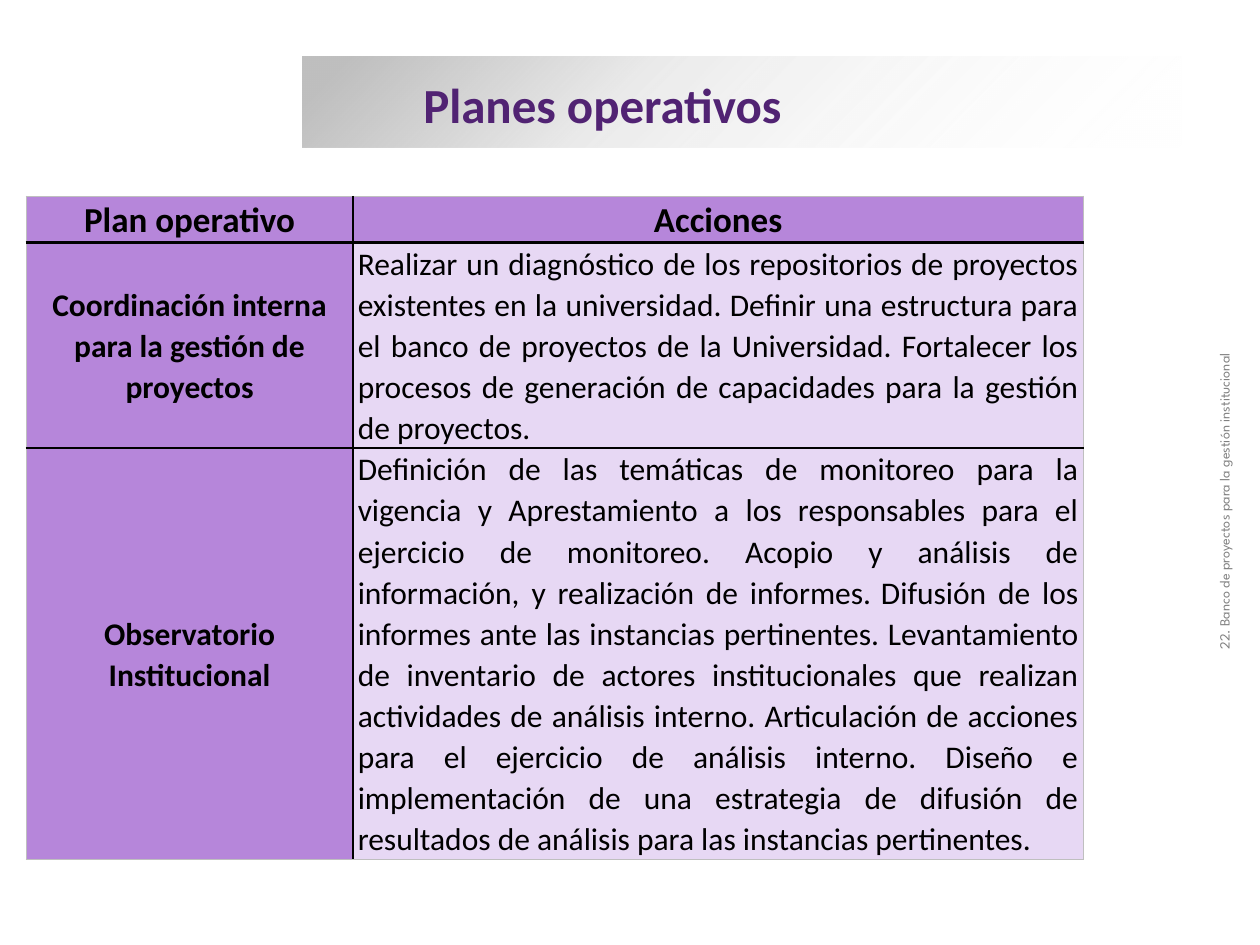
import lxml.etree
import pptx
import pptx.dml.color
import pptx.enum.shapes
import pptx.enum.text
import pptx.oxml
import pptx.oxml.ns
import pptx.util

WIDTH, HEIGHT = 10, 7.5
PURPLE, LILAC, BLACK, GREY = "B686DA", "E7D8F4", "000000", "BFBFBF"
ALIGN = pptx.enum.text.PP_ALIGN
MIDDLE = pptx.enum.text.MSO_ANCHOR.MIDDLE

ROWS = [
    ("Plan operativo", "Acciones"),
    ("Coordinación interna para la gestión de proyectos",
     "Realizar un diagnóstico de los repositorios de proyectos existentes en la "
     "universidad. Definir una estructura para el banco de proyectos de la "
     "Universidad. Fortalecer los procesos de generación de capacidades para la "
     "gestión de proyectos."),
    ("Observatorio Institucional",
     "Definición de las temáticas de monitoreo para la vigencia y Aprestamiento a "
     "los responsables para el ejercicio de monitoreo. Acopio y análisis de "
     "información, y realización de informes.\tDifusión de los informes ante las "
     "instancias pertinentes. Levantamiento de inventario de actores "
     "institucionales que realizan actividades de análisis interno. Articulación "
     "de acciones para el ejercicio de análisis interno. Diseño e implementación "
     "de una estrategia de difusión de resultados de análisis para las instancias "
     "pertinentes."),
]
COLUMN_SHARES = (2.59, 5.8)
ROW_SHARES = (0.35, 1.61, 3.21)


def color(value):
    return pptx.dml.color.RGBColor.from_string(value)


def inches(box):
    return [pptx.util.Inches(length) for length in box]


def style(paragraph, size, value, bold=False, name="Calibri", align=ALIGN.LEFT):
    paragraph.alignment = align
    font = paragraph.font
    font.name, font.size, font.bold = name, pptx.util.Pt(size), bold
    font.color.rgb = color(value)


def fill_gradient(shape, stops, angle):
    """Fill with (position %, colour, opacity %) stops."""
    namespace = pptx.oxml.ns.nsdecls("a")
    stop_xml = "".join(
        f'<a:gs pos="{position * 1000}"><a:srgbClr val="{value}">'
        f'<a:alpha val="{opacity * 1000}"/></a:srgbClr></a:gs>'
        for position, value, opacity in stops)
    gradient = pptx.oxml.parse_xml(
        f'<a:gradFill {namespace} rotWithShape="1"><a:gsLst>{stop_xml}</a:gsLst>'
        f'<a:lin ang="{angle * 60000}" scaled="0"/></a:gradFill>')
    shape.fill.background()
    old_fill = shape._element.spPr.find(pptx.oxml.ns.qn("a:noFill"))
    shape._element.spPr.replace(old_fill, gradient)


def add_heading(slide, box):
    left, top, width, height = box
    # Fading band behind the title
    band = slide.shapes.add_shape(
        pptx.enum.shapes.MSO_SHAPE.RECTANGLE, *inches(box))
    band.shadow.inherit = False
    band.line.fill.background()
    fill_gradient(band, [(5, GREY, 100), (37, GREY, 31), (100, "FFFFFF", 0)], 45)

    # Title
    title = slide.shapes.title
    title._element.addprevious(band._element)
    title.left, title.top, title.width, title.height = inches(
        (left + 0.86, top + 0.09, 6.2, 0.57))
    frame = title.text_frame
    frame.text = "Planes operativos"
    frame.auto_size = pptx.enum.text.MSO_AUTO_SIZE.NONE
    frame.vertical_anchor = MIDDLE
    style(frame.paragraphs[0], 28, "512373", bold=True)


def set_borders(cell, borders):
    """Borders map a side (L, R, T, B) to its colour and width in points."""
    properties = cell._tc.get_or_add_tcPr()
    for index, side in enumerate("LRTB"):
        value, width = borders[side]
        properties.insert(index, pptx.oxml.parse_xml(
            f'<a:ln{side} {pptx.oxml.ns.nsdecls("a")} w="{pptx.util.Pt(width)}">'
            f'<a:solidFill><a:srgbClr val="{value}"/></a:solidFill></a:ln{side}>'))


def add_plan_table(slide, box):
    left, top, width, height = box
    last = len(ROWS) - 1
    table = slide.shapes.add_table(len(ROWS), 2, *inches(box)).table
    for column, share in zip(table.columns, COLUMN_SHARES):
        column.width = pptx.util.Inches(width * share / sum(COLUMN_SHARES))
    for row, share in zip(table.rows, ROW_SHARES):
        row.height = pptx.util.Inches(height * share / sum(ROW_SHARES))

    # Lines above and below each row
    rules = [(GREY, 1), (BLACK, 1.5), (BLACK, 1), (GREY, 1)]
    uprights = [(GREY, 1), (BLACK, 1.5), (GREY, 1)]
    for r, texts in enumerate(ROWS):
        for c, text in enumerate(texts):
            cell = table.cell(r, c)
            is_action = r > 0 and c == 1
            cell.fill.solid()
            cell.fill.fore_color.rgb = color(LILAC if is_action else PURPLE)
            cell.vertical_anchor = MIDDLE
            cell.margin_left = cell.margin_right = pptx.util.Inches(0.04)
            cell.margin_top = cell.margin_bottom = 0
            cell.text_frame.text = text
            paragraph = cell.text_frame.paragraphs[0]
            paragraph.line_spacing = 1.07
            style(paragraph, 18 if r else 20, BLACK, bold=not is_action,
                  align=ALIGN.JUSTIFY if is_action else ALIGN.CENTER)
            set_borders(cell, {"L": uprights[c], "R": uprights[c + 1],
                               "T": rules[r], "B": rules[r + 1]})


def add_side_label(slide, box):
    label = slide.shapes.add_textbox(*inches(box))
    label.rotation = 270
    frame = label.text_frame
    frame.word_wrap = True
    frame.text = "22. Banco de proyectos para la gestión institucional"
    style(frame.paragraphs[0], 8, "808080", name="League Spartan",
          align=ALIGN.CENTER)


def main():
    presentation = pptx.Presentation()
    presentation.slide_width, presentation.slide_height = inches((WIDTH, HEIGHT))
    slide = presentation.slides.add_slide(presentation.slide_layouts[5])
    add_heading(slide, (0.24 * WIDTH, 0.06 * HEIGHT, 6.98, 0.72))
    add_plan_table(slide, (0.21, 1.56, 8.39, 5.17))
    add_side_label(slide, (7.3, 3.86, 4.84, 0.24))
    presentation.save("out.pptx")


if __name__ == "__main__":
    main()
